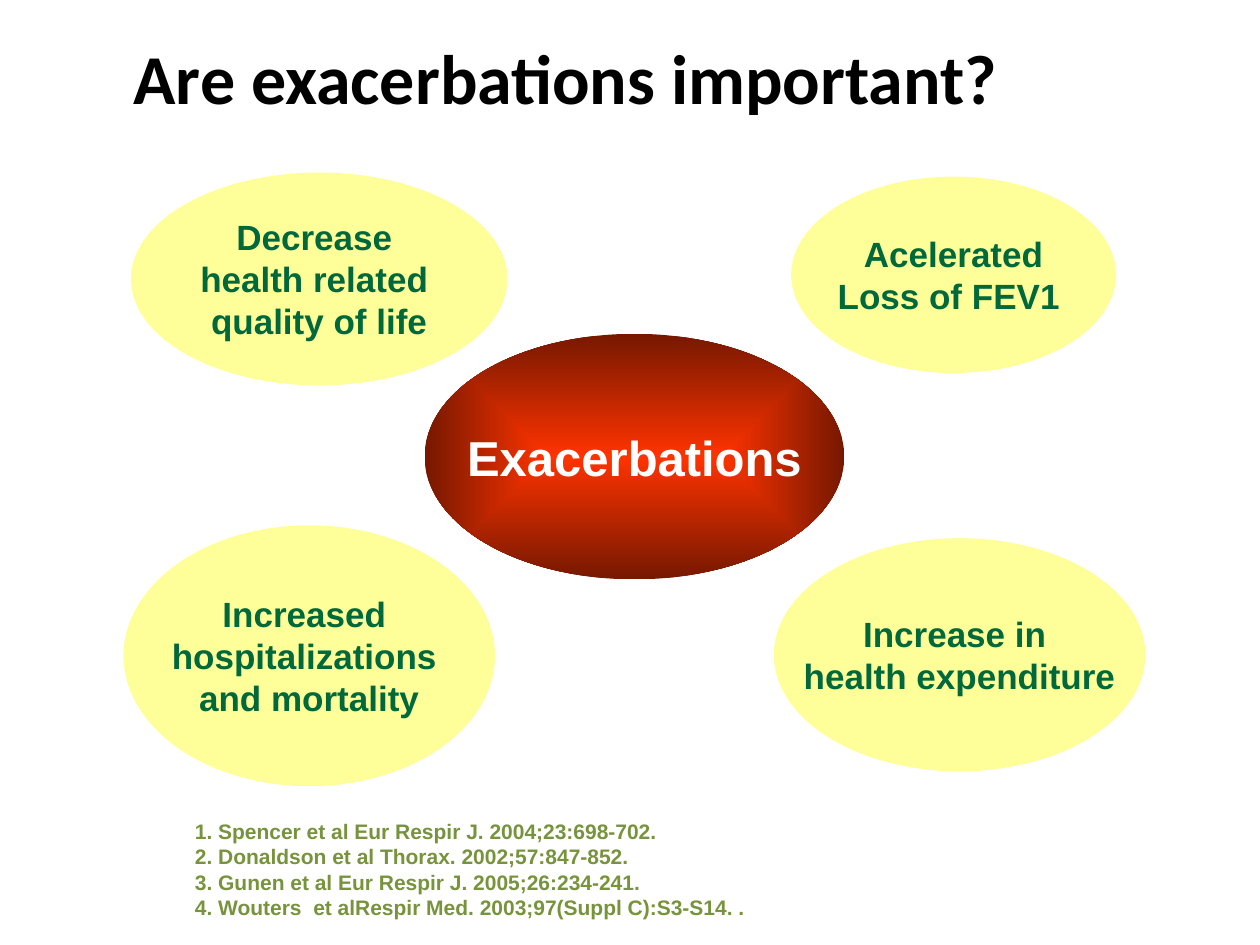
from lxml import etree
from pptx import Presentation
from pptx.dml.color import RGBColor
from pptx.enum.shapes import MSO_SHAPE as Shape
from pptx.enum.text import MSO_ANCHOR as Anchor, MSO_AUTO_SIZE as AutoSize, PP_ALIGN as Align
from pptx.oxml.ns import qn
from pptx.util import Cm, Pt

COLORS = {
    "title": "000000",
    "center_text": "FFFFFF",
    "center_inner": "FF3300",
    "center_outer": "761800",
    "effect": "FFFF99",
    "effect_text": "00693C",
    "reference": "77933C",
}

# Content: boxes are left, top, width, height in centimetres
TITLE = ["Are exacerbations important?"]
TITLE_BOX = (2.44, 0.56, 20.52, 1.98)
CENTER = ["Exacerbations"]
CENTER_BOX = (8.56, 6.73, 8.46, 4.95)
EFFECTS = [
    (["Increased ", "hospitalizations ", "and mortality"], (2.49, 10.59, 7.49, 5.26)),
    (["Increase in ", "health expenditure"], (15.6, 10.85, 7.49, 4.7)),
    (["Decrease ", "health related ", "quality of life"], (2.64, 3.48, 7.59, 4.29)),
    (["Acelerated", "Loss of FEV1 "], (15.95, 3.56, 6.55, 3.96)),
]
REFERENCES = [
    "1. Spencer et al Eur Respir J. 2004;23:698-702. ",
    "2. Donaldson et al Thorax. 2002;57:847-852. ",
    "3. Gunen et al Eur Respir J. 2005;26:234-241. ",
    "4. Wouters  et alRespir Med. 2003;97(Suppl C):S3-S14. .",
]
REFERENCES_BOX = (3.68, 16.38, 16.51, 2.31)


def rgb(name):
    return RGBColor.from_string(COLORS[name])


def lengths(box):
    return [Cm(value) for value in box]


def write_text(shape, lines, *, size, color, font="Arial", align=Align.CENTER,
               anchor=Anchor.MIDDLE, wrap=False, auto_size=AutoSize.NONE):
    frame = shape.text_frame
    frame.word_wrap = wrap
    frame.auto_size = auto_size
    frame.vertical_anchor = anchor
    for index, line in enumerate(lines):
        paragraph = frame.add_paragraph() if index else frame.paragraphs[0]
        paragraph.alignment = align
        run = paragraph.add_run()
        run.text = line
        run.font.name = font
        run.font.size = Pt(size)
        run.font.bold = True
        run.font.color.rgb = rgb(color)


def add_ellipse(slide, box):
    ellipse = slide.shapes.add_shape(Shape.OVAL, *lengths(box))
    ellipse.shadow.inherit = False
    ellipse.line.fill.background()
    return ellipse


def fill_from_center(shape, inner, outer):
    shape.fill.gradient()
    for stop, position, color in zip(shape.fill.gradient_stops, (0, 1), (inner, outer)):
        stop.position = position
        stop.color.rgb = rgb(color)
    gradient = shape._element.spPr.find(qn("a:gradFill"))
    linear = gradient.find(qn("a:lin"))
    radial = etree.Element(qn("a:path"), path="shape")
    etree.SubElement(radial, qn("a:fillToRect"), l="50000", t="50000", r="50000", b="50000")
    gradient.replace(linear, radial)


def main():
    presentation = Presentation()
    presentation.slide_width, presentation.slide_height = Cm(25.4), Cm(19.05)
    slide = presentation.slides.add_slide(presentation.slide_layouts[5])

    # Title
    title = slide.shapes.title
    title.left, title.top, title.width, title.height = lengths(TITLE_BOX)
    write_text(title, TITLE, size=40, color="title", font="Calibri",
               align=Align.LEFT, wrap=True)

    # Central topic
    center = add_ellipse(slide, CENTER_BOX)
    fill_from_center(center, "center_inner", "center_outer")
    write_text(center, CENTER, size=28, color="center_text")

    # Effects around it
    for lines, box in EFFECTS:
        effect = add_ellipse(slide, box)
        effect.fill.solid()
        effect.fill.fore_color.rgb = rgb("effect")
        write_text(effect, lines, size=20, color="effect_text")

    # References
    references = slide.shapes.add_textbox(*lengths(REFERENCES_BOX))
    write_text(references, REFERENCES, size=12, color="reference", align=Align.JUSTIFY,
               anchor=Anchor.TOP, wrap=True, auto_size=AutoSize.SHAPE_TO_FIT_TEXT)

    presentation.save("out.pptx")


if __name__ == "__main__":
    main()
